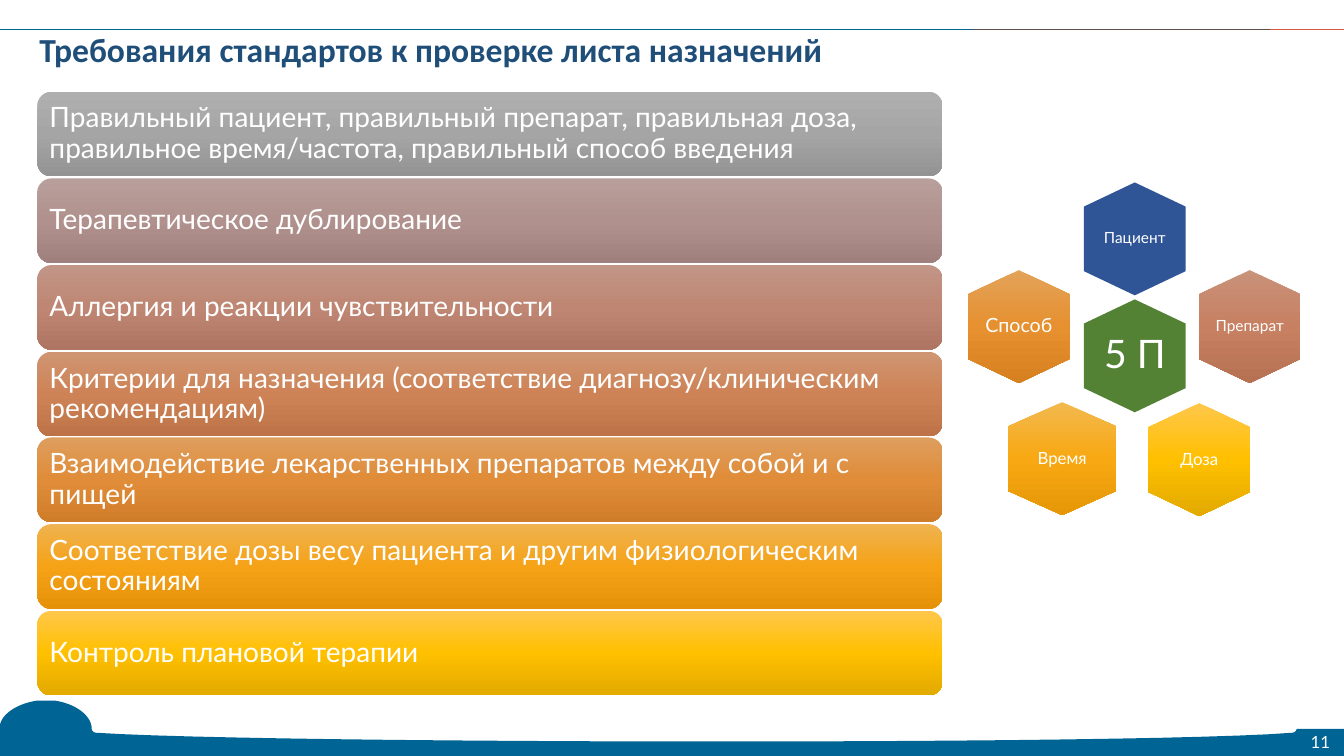
"""Build the slide on the standards for checking a prescription sheet."""
from copy import deepcopy
from dataclasses import dataclass
from itertools import pairwise

from pptx import Presentation
from pptx.dml.color import RGBColor
from pptx.enum.shapes import MSO_CONNECTOR, MSO_SHAPE
from pptx.enum.text import MSO_ANCHOR, PP_ALIGN
from pptx.oxml.ns import qn
from pptx.shapes.autoshape import Shape
from pptx.shapes.shapetree import SlideShapes
from pptx.text.text import TextFrame
from pptx.util import Pt

PX = 9144


@dataclass(frozen=True)
class Theme:
    """Hold the colours, fonts and type sizes."""
    white: str = "FFFFFF"
    navy: str = "1F4E79"
    sea: str = "006595"
    brown: str = "5F504C"
    coral: str = "DA5743"
    blue: str = "2F5597"
    green: str = "548235"
    gray: str = "AFAFAF A5A5A5 939393"
    mauve: str = "B89F9B B0918D 9F807C"
    rose: str = "C29687 BE8673 AD7562"
    clay: str = "CF9572 CE8356 BD7347"
    copper: str = "DE9E5E E08C38 D07D29"
    amber: str = "EFB350 F5A217 E59209"
    gold: str = "FFC74B FFC000 E3AA00"
    salmon: str = "C9927A C78062 B67052"
    orange: str = "E3A35A E6902F D68020"
    honey: str = "F2B94F F8A812 E59707"
    face: str = "Lato"
    head: str = "Calibri"
    title: int = 24
    body: int = 20
    hero: int = 28
    large: int = 14
    mid: int = 12
    small: int = 11


@dataclass(frozen=True)
class Row:
    """Describe one requirement bar."""
    text: str
    fill: str


@dataclass(frozen=True)
class Cell:
    """Describe one hexagon."""
    text: str
    left: int
    top: int
    fill: str
    size: int
    width: int = 101


LOOK = Theme()
ROWS = [
    Row("Правильный пациент, правильный препарат, правильная доза, "
        "правильное время/частота, правильный способ введения", LOOK.gray),
    Row("Терапевтическое дублирование", LOOK.mauve),
    Row("Аллергия и реакции чувствительности", LOOK.rose),
    Row("Критерии для назначения (соответствие диагнозу/клиническим рекомендациям)", LOOK.clay),
    Row("Взаимодействие лекарственных препаратов между собой и с пищей", LOOK.copper),
    Row("Соответствие дозы весу пациента и другим физиологическим состояниям", LOOK.amber),
    Row("Контроль плановой терапии", LOOK.gold),
]
CELLS = [
    Cell("Пациент", 1075, 181, LOOK.blue, LOOK.small),
    Cell("Препарат", 1189, 268, LOOK.salmon, LOOK.small),
    Cell("5 П", 1075, 297, LOOK.green, LOOK.hero),
    Cell("Способ", 960, 268, LOOK.orange, LOOK.large),
    Cell("Время", 1000, 399, LOOK.honey, LOOK.mid, 107),
    Cell("Доза", 1139, 400, LOOK.gold, LOOK.mid),
]
WAVE = [
    [(54, 695), (75, 698), (91, 710), (91, 723)],
    [(91, 723), (91, 725), (93, 727), (96, 727)],
    [(96, 727), (268, 738), (1127, 739), (1281, 727)],
    [(1281, 727), (1284, 727), (1286, 725), (1286, 723)],
    [(1333, 723), (1333, 750), (0, 750), (0, 719)],
    [(0, 719), (3, 707), (18, 698), (37, 695)],
]
BASE = 4


def write(frame: TextFrame, text: str, *, size: int, color: str = LOOK.white,
          font: str = LOOK.face, bold: bool = False, pad: tuple[int, int] = (0, 0),
          align: PP_ALIGN = PP_ALIGN.CENTER, space: float = 1.0) -> None:
    """Put formatted text into a frame."""
    frame.text = text
    frame.word_wrap = True
    frame.vertical_anchor = MSO_ANCHOR.MIDDLE
    frame.margin_left = frame.margin_right = pad[0] * PX
    frame.margin_top = frame.margin_bottom = pad[1] * PX
    line = frame.paragraphs[0]
    line.alignment = align
    line.line_spacing = space
    style = line.runs[0].font
    style.name, style.size, style.bold = font, Pt(size), bold
    style.color.rgb = RGBColor.from_string(color)


def paint(shape: Shape, tones: str) -> None:
    """Fill a shape with one colour or a downward blend of three."""
    shape.shadow.inherit = False
    shape.line.fill.background()
    names = tones.split()
    if len(names) == 1:
        shape.fill.solid()
        shape.fill.fore_color.rgb = RGBColor.from_string(names[0])
        return
    shape.fill.gradient()
    shape.fill.gradient_angle = 270
    stops = shape.element.spPr.find(".//" + qn("a:gsLst"))
    stops.insert(1, deepcopy(stops[0]))
    for i, (stop, name) in enumerate(zip(shape.fill.gradient_stops, names)):
        stop.position = i / 2
        stop.color.rgb = RGBColor.from_string(name)


def trace(shapes: SlideShapes, points: list[tuple[float, float]], fill: str) -> Shape:
    """Draw a closed outline through points in px."""
    first, *rest = [(round(x * PX), round(y * PX)) for x, y in points]
    pen = shapes.build_freeform(*first)
    pen.add_line_segments(rest, close=True)
    shape = pen.convert_to_shape()
    paint(shape, fill)
    return shape


def bend(knots: list[tuple[int, int]], steps: int = 24) -> list[tuple[float, float]]:
    """Sample a cubic curve."""
    points = []
    for i in range(steps + 1):
        t = i / steps
        parts = ((1 - t) ** 3, 3 * t * (1 - t) ** 2, 3 * t * t * (1 - t), t ** 3)
        points.append((sum(p * x for p, (x, _) in zip(parts, knots)),
                       sum(p * y for p, (_, y) in zip(parts, knots))))
    return points


def frame(shapes: SlideShapes) -> None:
    """Draw the wave, the top rule and the page number."""
    edge = [p for i, part in enumerate(WAVE) for p in (part if i == BASE else bend(part))]
    trace(shapes, edge, LOOK.sea)
    for (left, right), color in zip(pairwise((0, 965, 1260, 1333)),
                                    (LOOK.sea, LOOK.brown, LOOK.coral)):
        rule = shapes.add_connector(MSO_CONNECTOR.STRAIGHT, left * PX, 29 * PX,
                                    right * PX, 29 * PX)
        rule.line.width = Pt(1)
        rule.line.color.rgb = RGBColor.from_string(color)
        props = rule.element.spPr
        props.append(props.makeelement(qn("a:effectLst"), {}))
    page = shapes.add_textbox(1292 * PX, 723 * PX, 35 * PX, 26 * PX)
    write(page.text_frame, "11", size=LOOK.mid)


def bar(shapes: SlideShapes, row: Row, top: int) -> None:
    """Draw one requirement bar."""
    shape = shapes.add_shape(MSO_SHAPE.ROUNDED_RECTANGLE, 37 * PX, top * PX, 898 * PX, 84 * PX)
    paint(shape, row.fill)
    write(shape.text_frame, row.text, size=LOOK.body, pad=(8, 8),
          align=PP_ALIGN.LEFT, space=0.9)


def comb(shapes: SlideShapes, cell: Cell) -> None:
    """Draw one hexagon."""
    left, top, right = cell.left, cell.top, cell.left + cell.width
    mid = left + cell.width / 2
    shape = trace(shapes, [(mid, top), (right, top + 24), (right, top + 88),
                           (mid, top + 112), (left, top + 88), (left, top + 24)], cell.fill)
    write(shape.text_frame, cell.text, size=cell.size, pad=(8, 17), space=0.9)


def main() -> None:
    """Build and save the slide."""
    deck = Presentation()
    deck.slide_width, deck.slide_height = 1333 * PX, 750 * PX
    shapes = deck.slides.add_slide(deck.slide_layouts[5]).shapes
    frame(shapes)
    for i, row in enumerate(ROWS):
        bar(shapes, row, 91 + round(515 * i / 6))
    title = shapes.title
    title.left, title.top, title.width, title.height = 29 * PX, 21 * PX, 1143 * PX, 55 * PX
    write(title.text_frame, "Требования стандартов к проверке листа назначений",
          size=LOOK.title, color=LOOK.navy, font=LOOK.head, bold=True,
          pad=(10, 5), align=PP_ALIGN.LEFT)
    for cell in CELLS:
        comb(shapes, cell)
    deck.save("out.pptx")


if __name__ == "__main__":
    main()
